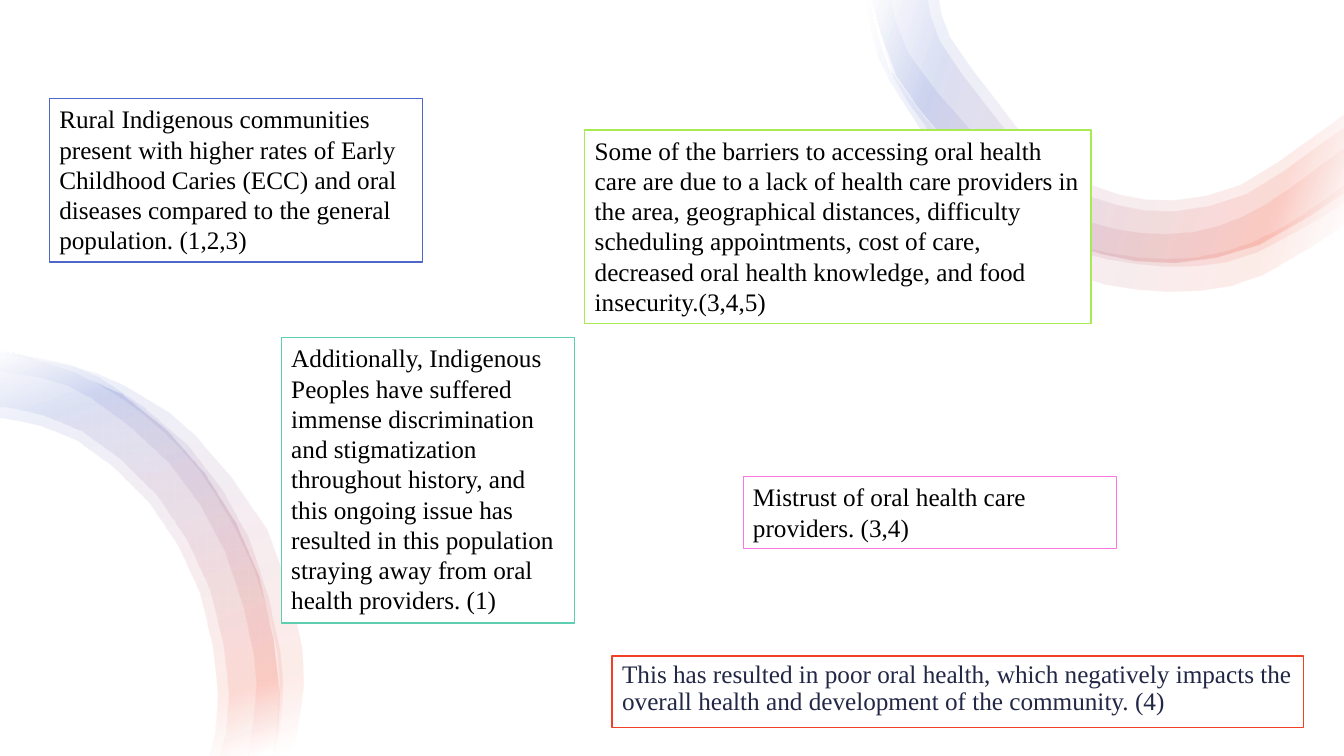
from dataclasses import dataclass

from lxml.etree import SubElement
from pptx import Presentation
from pptx.dml.color import RGBColor
from pptx.enum.text import MSO_ANCHOR, MSO_AUTO_SIZE, PP_ALIGN
from pptx.oxml.ns import qn
from pptx.util import Inches, Pt


@dataclass(frozen=True)
class Theme:
    font: str = "Times New Roman"
    text_size: float = 18
    text: str = "000000"
    conclusion: str = "212745"
    white: str = "FFFFFF"
    blue: str = "4E67C8"
    green: str = "A7EA52"
    teal: str = "5DCEAF"
    pink: str = "FD77E3"
    red: str = "F14124"
    ribbon_opacity: int = 10


THEME = Theme()
RIBBON_STOPS = [(2, THEME.white), (16, THEME.red), (85, THEME.blue), (100, THEME.white)]

# Ribbon edges in inches from the corner of their swirl's box: (outer edge, inner edge).
TOP_OUTER = [(0.05, 0), (0.29, 0.75), (0.74, 1.35), (1.18, 1.87), (1.7, 2.26),
             (2.31, 2.51), (3.04, 2.6), (3.88, 2.42), (4.73, 1.9)]
TOP_RIBBONS = [
    ([(0, 0), (0.11, 0.56), (0.39, 1.06), (0.71, 1.54), (1.05, 2.02), (1.49, 2.44),
      (2.05, 2.73), (2.67, 2.87), (3.31, 2.88), (3.93, 2.72), (4.73, 2.23)],
     [(0.04, 0), (0.22, 0.67), (0.83, 1.47), (1.21, 1.89), (1.65, 2.22), (2.16, 2.45),
      (2.7, 2.55), (3.26, 2.55), (3.79, 2.41), (4.28, 2.15), (4.73, 1.83)]),
    ([(0.05, 0), (0.26, 0.77), (0.56, 1.23), (0.87, 1.69), (1.2, 2.04), (1.53, 2.27),
      (2.09, 2.5), (2.67, 2.62), (3.27, 2.64), (3.87, 2.5), (4.73, 2.01)],
     [(0.23, 0), (0.41, 0.54), (1, 1.27), (1.36, 1.64), (1.75, 1.96), (2.2, 2.2),
      (2.71, 2.31), (3.23, 2.3), (3.71, 2.15), (4.15, 1.89), (4.73, 1.46)]),
    (TOP_OUTER,
     [(0.6, 0), (0.72, 0.41), (1.19, 1.06), (1.58, 1.52), (2.01, 1.85), (2.49, 2.03),
      (3.04, 2.09), (3.75, 1.92), (4.45, 1.45), (4.73, 1.25)]),
    (TOP_OUTER,
     [(0.71, 0), (0.82, 0.37), (1.28, 1), (1.64, 1.44), (2.04, 1.74), (2.52, 1.93),
      (3.04, 1.98), (3.69, 1.83), (4.39, 1.37), (4.73, 1.12)]),
]
LEFT_OUTER = [(0, 0.02), (0.22, 0.03), (1.22, 0.42), (2.03, 1.2), (2.57, 2.23), (2.77, 3.39),
              (2.7, 4)]
LEFT_RIBBONS = [
    (LEFT_OUTER,
     [(0, 0.66), (0.14, 0.67), (0.76, 0.87), (1.48, 1.49), (1.98, 2.38), (2.16, 3.39),
      (2.08, 4)]),
    (LEFT_OUTER,
     [(0, 0.55), (0.16, 0.56), (0.81, 0.78), (1.56, 1.42), (2.08, 2.35), (2.27, 3.39),
      (2.18, 4)]),
    ([(0, 0.02), (0.48, 0.08), (0.99, 0.25), (1.86, 0.92), (2.47, 1.85), (2.77, 2.95),
      (2.79, 3.52), (2.72, 4)],
     [(0, 0.19), (0.43, 0.26), (0.9, 0.45), (1.68, 1.1), (2.23, 1.98), (2.51, 2.98),
      (2.52, 3.51), (2.46, 4)]),
    ([(0, 0), (0.15, 0.01), (0.96, 0.21), (1.47, 0.47), (1.93, 0.82), (2.65, 1.76),
      (2.99, 2.92), (2.98, 3.53), (2.89, 4)],
     [(0, 0.03), (0.42, 0.09), (0.93, 0.29), (1.39, 0.59), (1.8, 0.97), (2.14, 1.41),
      (2.52, 2.15), (2.74, 2.95), (2.76, 3.51), (2.7, 4)]),
]

# Statement, box (left, top, width, height), outline colour, outline width, fill.
STATEMENTS = [
    ("Rural Indigenous communities present with higher rates of Early Childhood Caries (ECC) "
     "and oral diseases compared to the general population. (1,2,3)",
     (0.49, 0.98, 3.7, 1.62), THEME.blue, 1, THEME.white),
    ("Some of the barriers to accessing oral health care are due to a lack of health care "
     "providers in the area, geographical distances, difficulty scheduling appointments, cost "
     "of care, decreased oral health knowledge, and food insecurity.(3,4,5)",
     (5.8, 1.29, 5.02, 1.92), THEME.green, 1, THEME.white),
    ("Additionally, Indigenous Peoples have suffered immense discrimination and stigmatization "
     "throughout history, and this ongoing issue has resulted in this population straying away "
     "from oral health providers. (1)",
     (2.79, 3.35, 2.91, 2.83), THEME.teal, 1, THEME.white),
    ("Mistrust of oral health care providers. (3,4)",
     (7.37, 4.73, 3.7, 0.71), THEME.pink, 0.75, None),
]
CONCLUSION = ("This has resulted in poor oral health, which negatively impacts the overall "
              "health and development of the community. (4)")


def smooth(points, steps=2):
    """Return a Catmull-Rom curve through the points, with some steps between each two."""
    padded = [points[0], *points, points[-1]]
    curve = [points[0]]
    for a, b, c, d in zip(padded, padded[1:], padded[2:], padded[3:]):
        for step in range(1, steps + 1):
            t = step / steps
            curve.append(tuple(
                (2 * q + (r - p) * t + (2 * p - 5 * q + 4 * r - s) * t**2
                 + (3 * q - p - 3 * r + s) * t**3) / 2
                for p, q, r, s in zip(a, b, c, d)))
    return curve


def fill_with_gradient(shape, angle):
    """Fill with the translucent ribbon gradient, at a clockwise angle in degrees."""
    shape.fill.gradient()
    gradient = shape._element.spPr.find(qn("a:gradFill"))
    for child in list(gradient):
        gradient.remove(child)
    stops = SubElement(gradient, qn("a:gsLst"))
    for position, color in RIBBON_STOPS:
        stop = SubElement(stops, qn("a:gs"), pos=str(position * 1000))
        rgb = SubElement(stop, qn("a:srgbClr"), val=color)
        SubElement(rgb, qn("a:alpha"), val=str(THEME.ribbon_opacity * 1000))
    SubElement(gradient, qn("a:lin"), ang=str(angle * 60000), scaled="0")


def add_swirl(slide, left, top, ribbons, angle):
    for outer, inner in ribbons:
        outline = [(Inches(left + x), Inches(top + y))
                   for x, y in smooth(outer) + smooth(inner)[::-1]]
        builder = slide.shapes.build_freeform(*outline[0])
        builder.add_line_segments(outline[1:], close=True)
        ribbon = builder.convert_to_shape()
        ribbon.shadow.inherit = False
        ribbon.line.fill.background()
        fill_with_gradient(ribbon, angle)


def format_statement(shape, text, outline, outline_width, fill, color):
    if fill:
        shape.fill.solid()
        shape.fill.fore_color.rgb = RGBColor.from_string(fill)
    shape.line.color.rgb = RGBColor.from_string(outline)
    shape.line.width = Pt(outline_width)
    frame = shape.text_frame
    frame.word_wrap = True
    frame.auto_size = MSO_AUTO_SIZE.NONE
    frame.vertical_anchor = MSO_ANCHOR.TOP
    frame.text = text
    paragraph = frame.paragraphs[0]
    paragraph.alignment = PP_ALIGN.LEFT
    font = paragraph.runs[0].font
    font.name = THEME.font
    font.size = Pt(THEME.text_size)
    font.color.rgb = RGBColor.from_string(color)
    return paragraph


def add_statement(slide, text, box, outline, outline_width, fill):
    shape = slide.shapes.add_textbox(*map(Inches, box))
    format_statement(shape, text, outline, outline_width, fill, THEME.text)


def place_conclusion(body, box):
    """Use the body placeholder, without a bullet, for the closing statement."""
    body.left, body.top, body.width, body.height = map(Inches, box)
    paragraph = format_statement(body, CONCLUSION, THEME.red, 1, THEME.white, THEME.conclusion)
    paragraph.line_spacing = 0.9
    paragraph.space_before = Pt(10)
    properties = paragraph._p.get_or_add_pPr()
    properties.set("marL", "0")
    properties.set("indent", "0")
    SubElement(properties, qn("a:buNone"))


def main():
    presentation = Presentation()
    presentation.slide_width, presentation.slide_height = Inches(13.33), Inches(7.5)
    slide = presentation.slides.add_slide(presentation.slide_layouts[1])
    title = slide.shapes.title._element
    title.getparent().remove(title)

    place_conclusion(slide.placeholders[1], (6.07, 6.51, 6.86, 0.71))
    add_swirl(slide, 8.6, 0, TOP_RIBBONS, angle=200)
    add_swirl(slide, 0, 3.5, LEFT_RIBBONS, angle=250)
    for statement in STATEMENTS:
        add_statement(slide, *statement)
    presentation.save("out.pptx")


if __name__ == "__main__":
    main()
